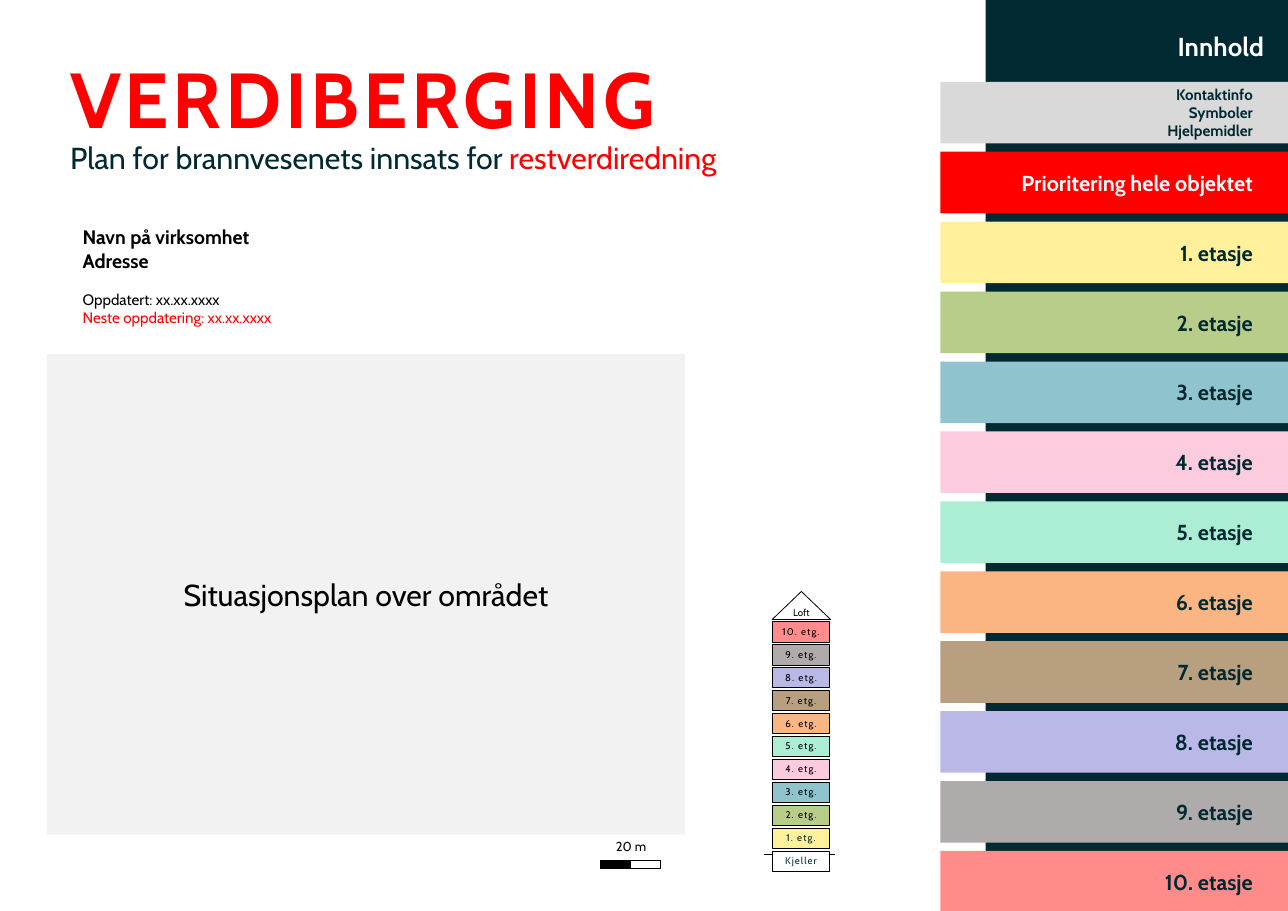
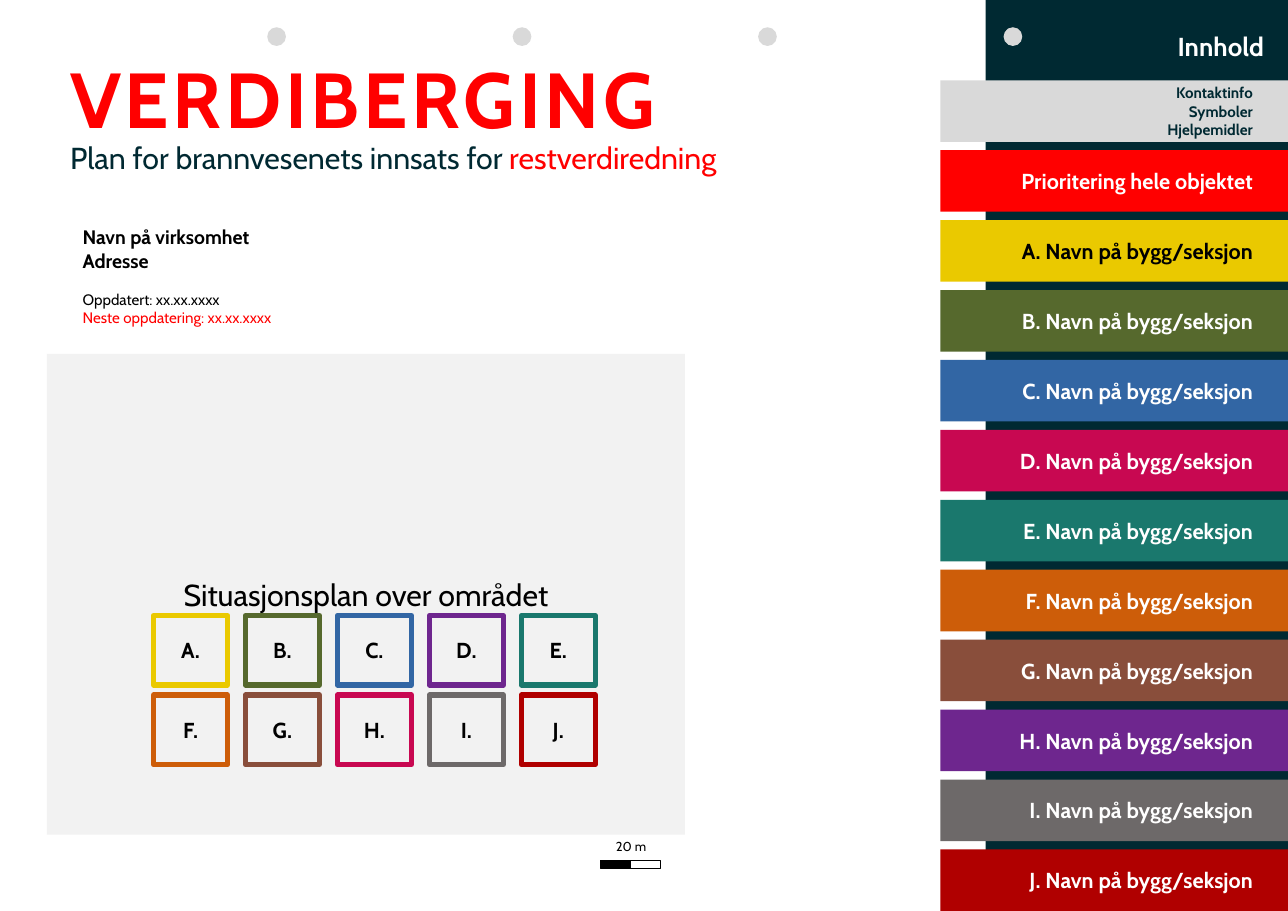
import pptx
import pptx.dml.color
import pptx.enum.shapes
import pptx.enum.text
import pptx.util
from pptx.oxml.ns import qn
import lxml.etree

Inches = pptx.util.Inches
Pt = pptx.util.Pt
RGBColor = pptx.dml.color.RGBColor
MSO_SHAPE = pptx.enum.shapes.MSO_SHAPE
ALIGN = pptx.enum.text.PP_ALIGN
ANCHOR = pptx.enum.text.MSO_ANCHOR

FONT = "Cabin"
NAVY = RGBColor(0x00, 0x29, 0x32)
RED = RGBColor(0xFF, 0x00, 0x00)
WHITE = RGBColor(0xFF, 0xFF, 0xFF)
BLACK = RGBColor(0x00, 0x00, 0x00)
LIGHT_GREY = RGBColor(0xD9, 0xD9, 0xD9)
PLAN_GREY = RGBColor(0xF2, 0xF2, 0xF2)
YELLOW = RGBColor(0xEA, 0xC9, 0x00)
CRIMSON = RGBColor(0xC8, 0x08, 0x51)
PURPLE = RGBColor(0x6E, 0x26, 0x8E)

FLOOR_COLORS = [
    RGBColor(0xFF, 0xF1, 0x9B),
    RGBColor(0xB8, 0xCD, 0x89),
    RGBColor(0x8F, 0xC3, 0xCD),
    RGBColor(0xFD, 0xCB, 0xDE),
    RGBColor(0xAC, 0xEE, 0xD3),
    RGBColor(0xFA, 0xB5, 0x82),
    RGBColor(0xB7, 0x9F, 0x7F),
    RGBColor(0xBA, 0xB8, 0xE6),
    RGBColor(0xAF, 0xAB, 0xAB),
    RGBColor(0xFF, 0x8B, 0x8B),
]
SECTION_COLORS = {
    "A": YELLOW,
    "B": RGBColor(0x56, 0x69, 0x2D),
    "C": RGBColor(0x32, 0x66, 0xA4),
    "D": CRIMSON,
    "E": RGBColor(0x1A, 0x78, 0x6D),
    "F": RGBColor(0xCD, 0x5D, 0x09),
    "G": RGBColor(0x89, 0x4E, 0x3B),
    "H": PURPLE,
    "I": RGBColor(0x6D, 0x69, 0x69),
    "J": RGBColor(0xB0, 0x00, 0x00),
}
MARKER_COLORS = {**SECTION_COLORS, "D": PURPLE, "H": CRIMSON}

SLIDE_WIDTH, SLIDE_HEIGHT = 16.53, 11.69
TEXT_INSETS = (0.11, 0.06, 0.11, 0.06)
BAND_INSETS = (0.11, 0.06, 0.45, 0.06)
HEADING_INSETS = (0.9, 0.06, 0.11, 0.06)


def set_frame(frame, insets, anchor=ANCHOR.TOP, wrap=True):
    frame.word_wrap = wrap
    frame.auto_size = pptx.enum.text.MSO_AUTO_SIZE.NONE
    frame.vertical_anchor = anchor
    (frame.margin_left, frame.margin_top,
     frame.margin_right, frame.margin_bottom) = map(Inches, insets)


def style_paragraph(paragraph, size, color, bold=False, align=ALIGN.LEFT):
    paragraph.alignment = align
    font = paragraph.font
    font.name, font.size, font.bold = FONT, Pt(size), bold
    font.color.rgb = color


def write_lines(frame, lines, size, color, bold=False, align=ALIGN.LEFT, spacing=0):
    frame.text = "\n".join(lines)
    for paragraph in frame.paragraphs:
        style_paragraph(paragraph, size, color, bold, align)
        if spacing:
            for run in paragraph.runs:
                run._r.get_or_add_rPr().set("spc", str(int(spacing * 100)))


def add_block(shapes, box, fill=None, line=None, line_width=0.75, kind=MSO_SHAPE.RECTANGLE):
    block = shapes.add_shape(kind, *map(Inches, box))
    block.shadow.inherit = False
    if fill is None:
        block.fill.background()
    else:
        block.fill.solid()
        block.fill.fore_color.rgb = fill
    if line is None:
        block.line.fill.background()
    else:
        block.line.color.rgb = line
        block.line.width = Pt(line_width)
    return block


def add_text(shapes, box, insets=TEXT_INSETS):
    frame = shapes.add_textbox(*map(Inches, box)).text_frame
    set_frame(frame, insets)
    return frame


def add_contents_title(slide, left, top, width, height):
    title = slide.shapes.title
    title.left, title.top, title.width, title.height = map(Inches, (left, top, width, height))
    title.fill.solid()
    title.fill.fore_color.rgb = NAVY
    set_frame(title.text_frame, (0.08, 0.39, 0.31, 0.12))
    write_lines(title.text_frame, ["Innhold"], 24, WHITE, True, ALIGN.RIGHT)


def add_heading(slide, left, top, width):
    name = add_text(slide.shapes, (left, top, width, 1.34), HEADING_INSETS)
    write_lines(name, ["VERDIBERGING"], 72, RED, True, spacing=3.5)
    purpose = add_text(slide.shapes, (left, top + 1.14, width, 1.07), HEADING_INSETS)
    paragraph = purpose.paragraphs[0]
    style_paragraph(paragraph, 28, NAVY)
    paragraph.add_run().text = "Plan for brannvesenets innsats for "
    emphasis = paragraph.add_run()
    emphasis.text = "restverdiredning"
    emphasis.font.color.rgb = RED


def add_company_info(slide, left, top, width, height):
    info = add_text(slide.shapes, (left, top, width, height))
    write_lines(info, ["Navn på virksomhet", "Adresse",
                       "Oppdatert: xx.xx.xxxx", "Neste oppdatering: xx.xx.xxxx"],
                18, BLACK, True)
    updated, next_update = info.paragraphs[2:]
    style_paragraph(updated, 14, BLACK)
    updated.space_before = Pt(17)
    style_paragraph(next_update, 14, RED)


def add_site_plan(slide, left, top, width, height):
    plan = add_block(slide.shapes, (left, top, width, height), PLAN_GREY)
    set_frame(plan.text_frame, TEXT_INSETS, ANCHOR.MIDDLE)
    write_lines(plan.text_frame, ["Situasjonsplan over området"], 28, BLACK, align=ALIGN.CENTER)


def add_scale_bar(slide, left, top):
    shapes = slide.shapes.add_group_shape().shapes
    half = 0.38
    for index, fill in enumerate((BLACK, WHITE)):
        add_block(shapes, (left + index * half, top + 0.28, half, 0.1), fill, BLACK, 0.5)
    label = add_text(shapes, (left + 0.01, top, 2 * half, 0.2), (0, 0, 0, 0))
    write_lines(label, ["20 m"], 12, BLACK, align=ALIGN.CENTER)


def add_index_bands(slide, left, top, width, entries):
    height = 0.79
    general = [
        (["Kontaktinfo", "Symboler", "Hjelpemidler"], LIGHT_GREY, NAVY, 14),
        (["Prioritering hele objektet"], RED, WHITE, 20),
    ]
    bands = general + [([label], fill, color, 20) for label, fill, color in entries]
    pitch = 9.87 / (len(bands) - 1)
    for index, (lines, fill, color, size) in enumerate(bands):
        band = add_block(slide.shapes, (left, top + index * pitch, width, height), fill)
        set_frame(band.text_frame, BAND_INSETS, ANCHOR.MIDDLE)
        write_lines(band.text_frame, lines, size, color, True, ALIGN.RIGHT)


def add_floor_tower(slide, left, top):
    shapes = slide.shapes.add_group_shape().shapes
    width, height, first, pitch = 0.74, 0.26, 0.39, 0.294
    ground_y = Inches(top + 3.37)
    ground = shapes.add_connector(pptx.enum.shapes.MSO_CONNECTOR.STRAIGHT,
                                  Inches(left - 0.1), ground_y,
                                  Inches(left + width + 0.07), ground_y)
    ground.line.color.rgb = BLACK
    ground.line.width = Pt(0.25)
    lxml.etree.SubElement(ground._element.spPr, qn("a:effectLst"))

    loft = add_block(shapes, (left, top, 0.75, 0.36), WHITE, BLACK,
                     kind=MSO_SHAPE.ISOSCELES_TRIANGLE)
    set_frame(loft.text_frame, (0, 0, 0, 0), ANCHOR.MIDDLE, False)
    write_lines(loft.text_frame, ["Loft"], 9, BLACK, align=ALIGN.CENTER)

    levels = [("Kjeller", WHITE, NAVY)]
    for number, fill in enumerate(FLOOR_COLORS, 1):
        levels.append((f"{number}. etg.", fill, NAVY if number == 1 else BLACK))
    for index, (label, fill, color) in enumerate(reversed(levels)):
        level = add_block(shapes, (left, top + first + index * pitch, width, height), fill, BLACK)
        set_frame(level.text_frame, (0.05, 0.05, 0.05, 0.05), wrap=False)
        write_lines(level.text_frame, [label], 9, color, align=ALIGN.CENTER, spacing=1)


def add_section_markers(slide, left, top):
    columns = 5
    for index, (letter, color) in enumerate(MARKER_COLORS.items()):
        row, column = divmod(index, columns)
        marker = add_block(slide.shapes, (left + column * 1.18, top + row * 1.02, 0.95, 0.89),
                           line=color, line_width=5)
        set_frame(marker.text_frame, TEXT_INSETS, ANCHOR.MIDDLE)
        write_lines(marker.text_frame, [f"{letter}."], 20, BLACK, True, ALIGN.CENTER)


def add_punch_holes(slide, left, top):
    shapes = slide.shapes.add_group_shape().shapes
    for index in range(4):
        add_block(shapes, (left + index * 3.15, top, 0.24, 0.24), LIGHT_GREY, kind=MSO_SHAPE.OVAL)


def add_cover(presentation, bands_top, entries):
    slide = presentation.slides.add_slide(presentation.slide_layouts[5])
    add_contents_title(slide, 12.65, 0, 3.88, SLIDE_HEIGHT)
    add_heading(slide, 0, 0.59, 10.26)
    add_company_info(slide, 0.95, 2.83, 3.98, 1.43)
    add_site_plan(slide, 0.6, 4.54, 8.19, 6.17)
    add_scale_bar(slide, 7.71, 10.76)
    add_index_bands(slide, 12.07, bands_top, 4.46, entries)
    return slide


def main():
    presentation = pptx.Presentation()
    presentation.slide_width = Inches(SLIDE_WIDTH)
    presentation.slide_height = Inches(SLIDE_HEIGHT)

    floors = [(f"{number}. etasje", fill, NAVY) for number, fill in enumerate(FLOOR_COLORS, 1)]
    floor_cover = add_cover(presentation, 1.05, floors)
    add_floor_tower(floor_cover, 9.91, 7.59)

    sections = [(f"{letter}. Navn på bygg/seksjon", fill, BLACK if letter == "A" else WHITE)
                for letter, fill in SECTION_COLORS.items()]
    section_cover = add_cover(presentation, 1.03, sections)
    add_section_markers(section_cover, 1.97, 7.9)
    add_punch_holes(section_cover, 3.43, 0.35)

    presentation.save("out.pptx")


if __name__ == "__main__":
    main()
